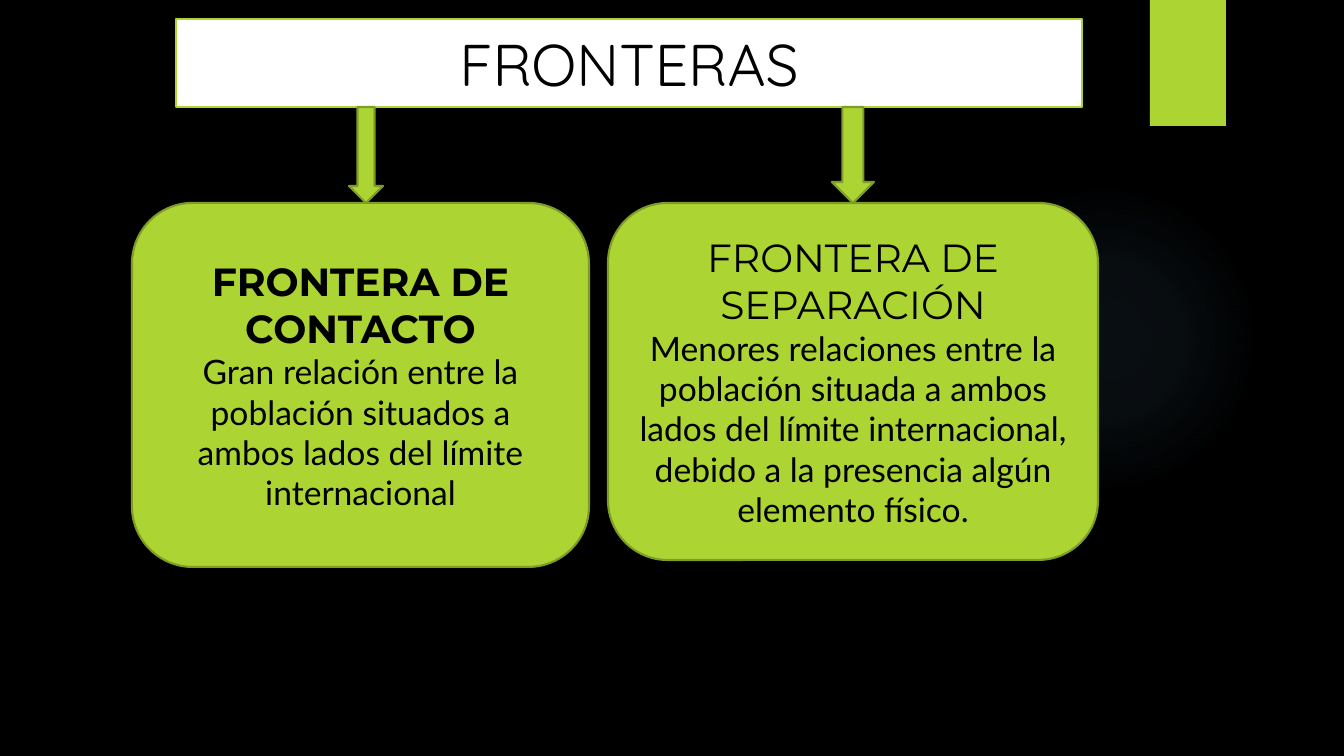
import pptx
import pptx.dml.color
import pptx.enum.shapes
import pptx.enum.text
import pptx.oxml
import pptx.oxml.ns
import pptx.util

SHAPE = pptx.enum.shapes.MSO_SHAPE
EMU_PER_PX = 914400 / 100.8

COLORS = {
    "background": "000000",
    "text": "000000",
    "white": "FFFFFF",
    "lime": "ACD433",
    "outline": "7F9D26",
    "glow": "7AC4F0",
}

# Content: places are left, top, width, height in px
TITLE = "FRONTERAS"
TITLE_PLACE = (176, 19, 906, 88)
TITLE_FORMAT = {"name": "Quicksand", "size": 42, "bold": False}
BODY_FORMAT = {"name": "Lato", "size": 24, "bold": False}
GLOW_PLACE = (949, 184, 310, 310)
GLOW_STOPS = [(0, 7), (36, 6), (69, 0)]  # position %, opacity %
TAB_PLACE = (1150, 0, 76, 126)
ARROW_TOP, CARD_TOP = 107, 203
CARDS = [
    {
        "heading": "FRONTERA DE CONTACTO",
        "body": "Gran relación entre la población situados a ambos lados "
                "del límite internacional",
        "bold": True, "left": 132, "width": 457, "height": 364,
        "arrow_center": 366, "arrow_width": 34,
    },
    {
        "heading": "FRONTERA DE SEPARACIÓN",
        "body": "Menores relaciones entre la población situada a ambos lados "
                "del límite internacional, debido a la presencia algún "
                "elemento físico.",
        "bold": False, "left": 608, "width": 490, "height": 357,
        "arrow_center": 853, "arrow_width": 42,
    },
]


def px(length):
    return pptx.util.Emu(round(length * EMU_PER_PX))


def color(name):
    return pptx.dml.color.RGBColor.from_string(COLORS[name])


def add_box(page, kind, place, fill, line=None):
    box = page.shapes.add_shape(kind, *map(px, place))
    box.shadow.inherit = False
    box.fill.solid()
    box.fill.fore_color.rgb = color(fill)
    if line:
        box.line.color.rgb = color(line)
        box.line.width = pptx.util.Pt(1.5)
    else:
        box.line.fill.background()
    return box


def write(box, lines):
    frame = box.text_frame
    frame.word_wrap = True
    frame.vertical_anchor = pptx.enum.text.MSO_ANCHOR.MIDDLE
    for index, (text, formats) in enumerate(lines):
        para = frame.add_paragraph() if index else frame.paragraphs[0]
        para.alignment = pptx.enum.text.PP_ALIGN.CENTER
        span = para.add_run()
        span.text = text
        span.font.color.rgb = color("text")
        for name, value in formats.items():
            setattr(span.font, name, pptx.util.Pt(value) if name == "size" else value)


def add_glow(page):
    glow = add_box(page, SHAPE.OVAL, GLOW_PLACE, "glow")
    stops = "".join(
        f'<a:gs pos="{position * 1000}"><a:srgbClr val="{COLORS["glow"]}">'
        f'<a:alpha val="{opacity * 1000}"/></a:srgbClr></a:gs>'
        for position, opacity in GLOW_STOPS)
    gradient = pptx.oxml.parse_xml(
        f'<a:gradFill {pptx.oxml.ns.nsdecls("a")}><a:gsLst>{stops}</a:gsLst>'
        '<a:path path="circle"><a:fillToRect l="50000" t="50000" r="50000" '
        'b="50000"/></a:path></a:gradFill>')
    properties = glow.element.spPr
    solid = properties.find(pptx.oxml.ns.qn("a:solidFill"))
    properties.replace(solid, gradient)


def main():
    deck = pptx.Presentation()
    deck.slide_width, deck.slide_height = px(1344), px(756)
    page = deck.slides.add_slide(deck.slide_layouts[6])

    # Backdrop
    page.background.fill.solid()
    page.background.fill.fore_color.rgb = color("background")
    add_glow(page)
    add_box(page, SHAPE.RECTANGLE, TAB_PLACE, "lime")

    # Title bar
    title = add_box(page, SHAPE.RECTANGLE, TITLE_PLACE, "white", "lime")
    write(title, [(TITLE, TITLE_FORMAT)])

    # Cards, each with an arrow from the title bar
    for card in CARDS:
        place = (card["left"], CARD_TOP, card["width"], card["height"])
        box = add_box(page, SHAPE.ROUNDED_RECTANGLE, place, "lime", "outline")
        heading_format = {"name": "Montserrat", "size": 28, "bold": card["bold"]}
        write(box, [(card["heading"], heading_format), (card["body"], BODY_FORMAT)])
        arrow_left = card["arrow_center"] - card["arrow_width"] / 2
        arrow_place = (arrow_left, ARROW_TOP, card["arrow_width"], CARD_TOP - ARROW_TOP)
        add_box(page, SHAPE.DOWN_ARROW, arrow_place, "lime", "outline")

    deck.save("out.pptx")


if __name__ == "__main__":
    main()
